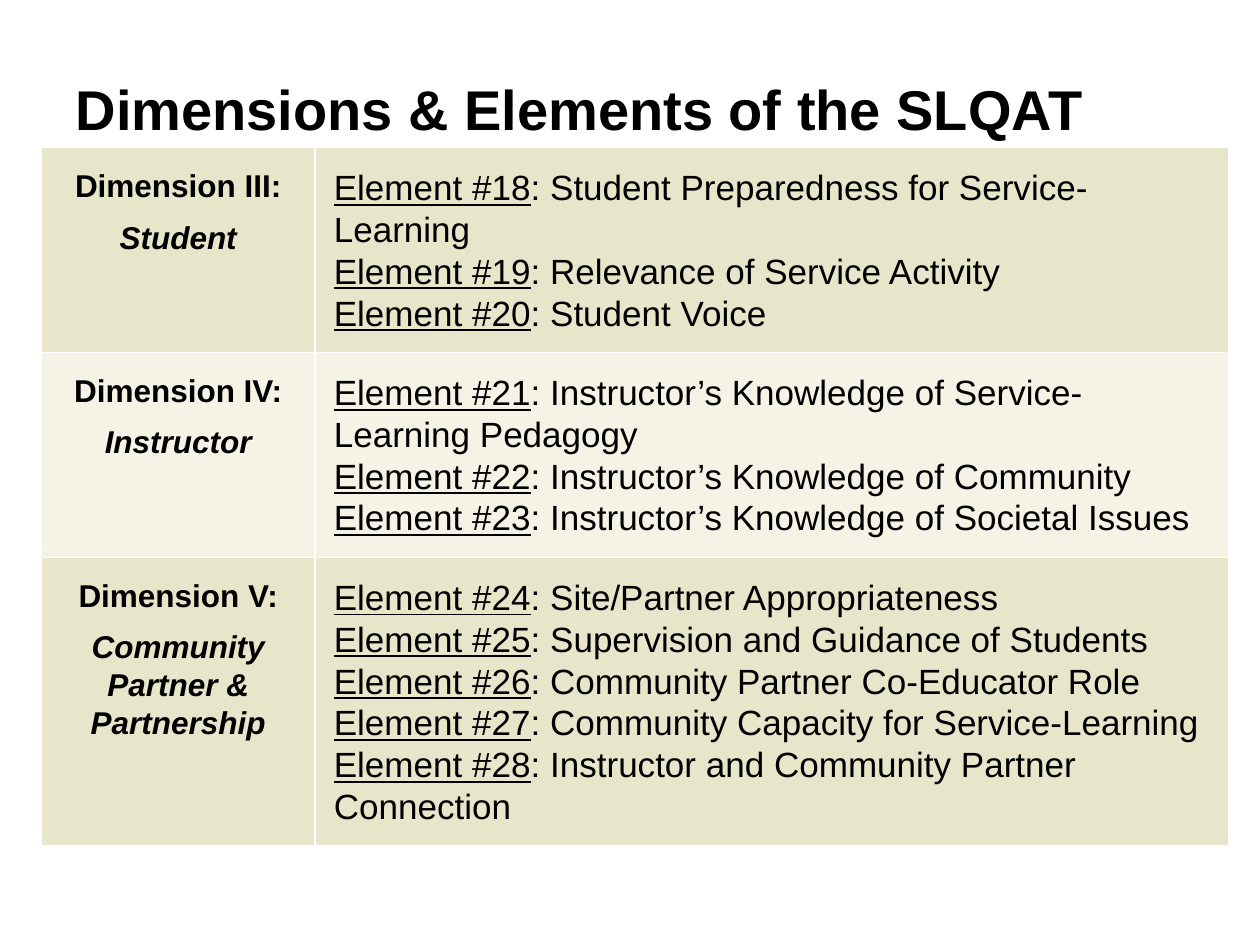
from lxml import etree
from pptx import Presentation
from pptx.dml.color import RGBColor
from pptx.enum.text import MSO_ANCHOR, MSO_AUTO_SIZE, PP_ALIGN
from pptx.oxml.ns import qn
from pptx.util import Inches, Pt

LEFT, CENTER = PP_ALIGN.LEFT, PP_ALIGN.CENTER
TOP, NO_FIT = MSO_ANCHOR.TOP, MSO_AUTO_SIZE.NONE

THEME = {
    "font": "Arial",
    "text": RGBColor(0, 0, 0),
    "bands": [RGBColor(0xE8, 0xE6, 0xCA), RGBColor(0xF4, 0xF3, 0xE6)],
    "border": "FFFFFF",
    "title": 32,
    "dimension": 18,
    "element": 20,
    "spacing": 1.07,
}

COLUMNS = [2.17, 7.25]
ROWS = [1.56, 1.56, 1.88]
PADDING = Inches(0.15)

DIMENSIONS = [
    ("Dimension III:", "Student", [
        "Student Preparedness for Service-Learning",
        "Relevance of Service Activity",
        "Student Voice",
    ]),
    ("Dimension IV:", "Instructor", [
        "Instructor’s Knowledge of Service-Learning Pedagogy",
        "Instructor’s Knowledge of Community",
        "Instructor’s Knowledge of Societal Issues",
    ]),
    ("Dimension V:", "Community Partner & Partnership", [
        "Site/Partner Appropriateness",
        "Supervision and Guidance of Students",
        "Community Partner Co-Educator Role",
        "Community Capacity for Service-Learning",
        "Instructor and Community Partner Connection",
    ]),
]
FIRST_ELEMENT = 18


def add_run(p, text, size, bold=False, italic=False, underline=False):
    r = p.add_run()
    r.text = text
    r.font.name, r.font.size = THEME["font"], Pt(size)
    r.font.color.rgb = THEME["text"]
    r.font.bold, r.font.italic, r.font.underline = bold, italic, underline


def style_cell(cell, color, align):
    cell.margin_left = cell.margin_right = PADDING
    cell.margin_top = cell.margin_bottom = PADDING
    cell.vertical_anchor = TOP
    for p in cell.text_frame.paragraphs:
        p.alignment = align
        p.line_spacing = THEME["spacing"]
    # Borders come before the fill in the cell properties
    tc_pr = cell._tc.get_or_add_tcPr()
    for side in ("a:lnL", "a:lnR", "a:lnT", "a:lnB"):
        ln = etree.SubElement(tc_pr, qn(side), w=str(Pt(1)))
        fill = etree.SubElement(ln, qn("a:solidFill"))
        etree.SubElement(fill, qn("a:srgbClr"), val=THEME["border"])
    cell.fill.solid()
    cell.fill.fore_color.rgb = color


prs = Presentation()
prs.slide_width, prs.slide_height = Inches(10), Inches(7.5)
s = prs.slides.add_slide(prs.slide_layouts.get_by_name("Title Only"))

# Title
title = s.shapes.title
title.left, title.top = Inches(0.5), Inches(0.5)
title.width, title.height = Inches(9.02), Inches(0.78)
tf = title.text_frame
tf.auto_size, tf.vertical_anchor, tf.word_wrap = NO_FIT, TOP, True
tf.margin_top = Inches(0.09)
tf.paragraphs[0].alignment = LEFT
add_run(tf.paragraphs[0], "Dimensions & Elements of the SLQAT", THEME["title"], bold=True)

# Table grid
frame = s.shapes.add_table(len(ROWS), len(COLUMNS), Inches(0.33), Inches(1.17),
                           Inches(sum(COLUMNS)), Inches(sum(ROWS)))
table = frame.table
table.first_row = table.horz_banding = False
for column, width in zip(table.columns, COLUMNS):
    column.width = Inches(width)
for row, height in zip(table.rows, ROWS):
    row.height = Inches(height)

# One row per dimension, elements numbered through
number = FIRST_ELEMENT
for i, (label, name, elements) in enumerate(DIMENSIONS):
    color = THEME["bands"][i % 2]

    cell = table.cell(i, 0)
    add_run(cell.text_frame.paragraphs[0], label, THEME["dimension"], bold=True)
    p = cell.text_frame.add_paragraph()
    p.space_before = Pt(8)
    add_run(p, name, THEME["dimension"], bold=True, italic=True)
    style_cell(cell, color, CENTER)

    cell = table.cell(i, 1)
    tf = cell.text_frame
    for j, element in enumerate(elements):
        p = tf.add_paragraph() if j else tf.paragraphs[0]
        add_run(p, f"Element #{number}", THEME["element"], underline=True)
        add_run(p, f": {element}", THEME["element"])
        number += 1
    style_cell(cell, color, LEFT)

prs.save("out.pptx")
